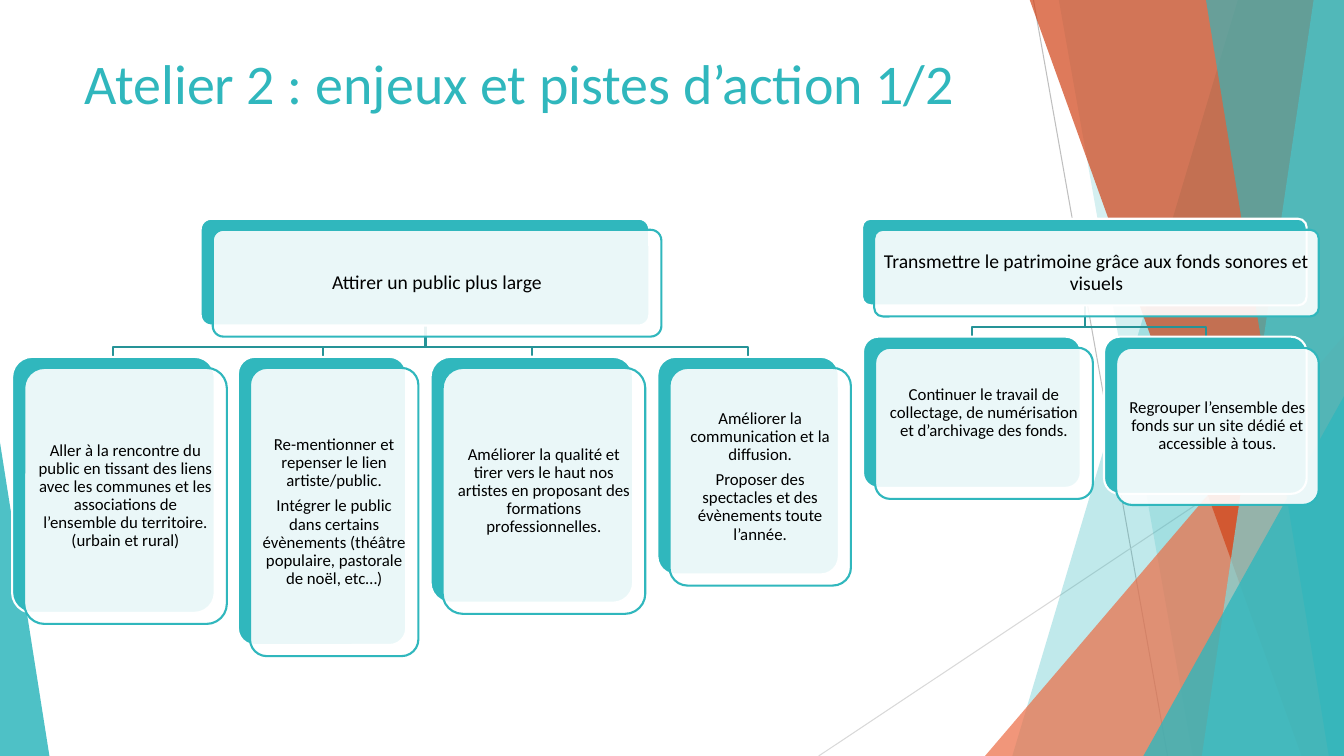
import pptx
import pptx.dml.color
import pptx.enum.shapes
import pptx.enum.text
import pptx.oxml
import pptx.oxml.ns
import pptx.util

RGBColor = pptx.dml.color.RGBColor
TEAL = RGBColor(0x30, 0xB7, 0xBD)
DARK_TEAL = RGBColor(0x26, 0x93, 0x97)
PALE_TEAL = RGBColor(0x7C, 0xDA, 0xDE)
ORANGE = RGBColor(0xEC, 0x6E, 0x47)
RUST = RGBColor(0xD1, 0x42, 0x16)
GREY = RGBColor(0xBF, 0xBF, 0xBF)
LIGHT_GREY = RGBColor(0xD9, 0xD9, 0xD9)
WHITE = RGBColor(0xFF, 0xFF, 0xFF)
BLACK = RGBColor(0, 0, 0)

PX = 9144  # EMU: 100 px to the inch
WIDTH, HEIGHT = 1333, 750
FONT = "Calibri"

TITLE = "Atelier 2 : enjeux et pistes d’action 1/2"
TITLE_BOX = (74, 0, 940, 120)

# Each branch: left, top, width, height and text of its head, then its actions
# as left, width, height, paragraphs and extra room under the text.
BRANCHES = [
    ((199, 217, 445, 106), "Attirer un public plus large", [
        (12, 201, 254, ["Aller à la rencontre du public en tissant des liens avec les communes "
                        "et les associations de l’ensemble du territoire. (urbain et rural)"], 0),
        (236, 167, 286, ["Re-mentionner et repenser le lien artiste/public.",
                         "Intégrer le public dans certains évènements (théâtre populaire, "
                         "pastorale de noël, etc…)"], 0),
        (427, 201, 244, ["Améliorer la qualité et tirer vers le haut nos artistes en proposant "
                         "des formations professionnelles."], 0),
        (652, 180, 216, ["Améliorer la communication et la diffusion.",
                         "Proposer des spectacles et des évènements toute l’année."], 0),
    ]),
    ((855, 217, 441, 86), "Transmettre le patrimoine grâce aux fonds sonores et visuels", [
        (856, 216, 150, ["Continuer le travail de collectage, de numérisation et d’archivage "
                         "des fonds."], 21),
        (1095, 201, 156, ["Regrouper l’ensemble des fonds sur un site dédié et accessible "
                          "à tous."], 0),
    ]),
]
LEVEL_GAP, BEND_ABOVE_ACTION = 31, 10
FRONT_SHIFT_X, FRONT_SHIFT_Y = 12, 11

THIN_LINES = [((1025, 0), (1158, 750), GREY), ((1333, 403), (812, 750), LIGHT_GREY)]
# Bands run from a slanted left edge (top x, bottom x) to the slide's right edge;
# triangles are left, top, width, height, apex.
FACETS = [
    ("band", (1228, 1004), TEAL, 30),
    ("band", (1050, 1183), TEAL, 20),
    ("triangle", (977, 333, 356, 417, 1), ORANGE, 72),
    ("band", (1021, 1291), RUST, 70),
    ("band", (1303, 1192), PALE_TEAL, 70),
    ("band", (1196, 1318), TEAL, 65),
    ("triangle", (1134, 393, 199, 357, 1), TEAL, 80),
    ("triangle", (0, 439, 49, 311, 0), TEAL, 85),
]


def emu(*lengths):
    return [length * PX for length in lengths]


def apply_format(target, values):
    for name, value in values.items():
        setattr(target, name, value)


def paint(shape, fill=None, opacity=100, line=None):
    """Set fill, its opacity in percent, and a 1.5 pt line; None means absent."""
    shape.shadow.inherit = False
    if fill is None:
        shape.fill.background()
    else:
        shape.fill.solid()
        shape.fill.fore_color.rgb = fill
        if opacity < 100:
            color = shape.fill._xPr.find(".//" + pptx.oxml.ns.qn("a:srgbClr"))
            alpha = pptx.oxml.parse_xml(
                f'<a:alpha {pptx.oxml.ns.nsdecls("a")} val="{opacity * 1000}"/>')
            color.append(alpha)
    if line is None:
        shape.line.fill.background()
    else:
        shape.line.color.rgb = line
        shape.line.width = pptx.util.Pt(1.5)


def add_outline(shapes, points, close):
    builder = shapes.build_freeform(*points[0], scale=PX)
    builder.add_line_segments(points[1:], close=close)
    return builder.convert_to_shape()


def add_thin_line(shapes, start, end, color):
    line = shapes.add_connector(pptx.enum.shapes.MSO_CONNECTOR.STRAIGHT, *emu(*start, *end))
    line.line.color.rgb = color
    line.line.width = pptx.util.Pt(0.75)
    line._element.spPr.append(
        pptx.oxml.parse_xml(f'<a:effectLst {pptx.oxml.ns.nsdecls("a")}/>'))


def add_facet(shapes, kind, geometry, color, opacity):
    if kind == "band":
        top_x, bottom_x = geometry
        corners = [(top_x, -1), (WIDTH, -1), (WIDTH, HEIGHT), (bottom_x, HEIGHT)]
        facet = add_outline(shapes, corners, close=True)
    else:
        *box, apex = geometry
        facet = shapes.add_shape(pptx.enum.shapes.MSO_SHAPE.ISOSCELES_TRIANGLE, *emu(*box))
        facet.adjustments[0] = apex
    paint(facet, color, opacity)


def write(shape, paragraphs, size, color, frame_format, paragraph_format):
    frame = shape.text_frame
    apply_format(frame, {"word_wrap": True, **frame_format})
    for index, text in enumerate(paragraphs):
        paragraph = frame.add_paragraph() if index else frame.paragraphs[0]
        apply_format(paragraph, paragraph_format)
        run = paragraph.add_run()
        run.text = text
        apply_format(run.font, {"name": FONT, "size": pptx.util.Pt(size)})
        run.font.color.rgb = color


def add_card(shapes, box, paragraphs, size, margin, room_below=0):
    """Add a teal card with a translucent white card, holding the text, over it."""
    left, top, width, height = box
    front_box = (left + FRONT_SHIFT_X, top + FRONT_SHIFT_Y, width, height)
    for place, fill, opacity, line in ((box, TEAL, 100, WHITE), (front_box, WHITE, 90, TEAL)):
        card = shapes.add_shape(pptx.enum.shapes.MSO_SHAPE.ROUNDED_RECTANGLE, *emu(*place))
        card.adjustments[0] = 0.1
        paint(card, fill, opacity, line)
    margins = {f"margin_{side}": margin * PX for side in ("left", "top", "right")}
    write(card, paragraphs, size, BLACK,
          {**margins, "margin_bottom": (margin + room_below) * PX,
           "vertical_anchor": pptx.enum.text.MSO_ANCHOR.MIDDLE},
          {"alignment": pptx.enum.text.PP_ALIGN.CENTER, "line_spacing": 0.9,
           "space_after": pptx.util.Pt(5)})


def add_branch(shapes, head_box, head_text, actions):
    left, top, width, height = head_box
    head_x, head_bottom = left + width / 2, top + height
    action_top = head_bottom + LEVEL_GAP
    bend_y = action_top - BEND_ABOVE_ACTION
    for action_left, action_width, *_ in actions:
        action_x = action_left + action_width / 2
        elbow = add_outline(shapes, [(head_x, head_bottom), (head_x, bend_y),
                                     (action_x, bend_y), (action_x, action_top)], close=False)
        paint(elbow, line=DARK_TEAL)
    add_card(shapes, head_box, [head_text], 14, 6)
    for action_left, action_width, action_height, paragraphs, room_below in actions:
        add_card(shapes, (action_left, action_top, action_width, action_height),
                 paragraphs, 12, 5, room_below)


def main():
    presentation = pptx.Presentation()
    apply_format(presentation, {"slide_width": WIDTH * PX, "slide_height": HEIGHT * PX})
    slide = presentation.slides.add_slide(presentation.slide_layouts[6])
    shapes = slide.shapes
    for thin_line in THIN_LINES:
        add_thin_line(shapes, *thin_line)
    for facet in FACETS:
        add_facet(shapes, *facet)
    write(shapes.add_textbox(*emu(*TITLE_BOX)), [TITLE], 40, TEAL,
          {"vertical_anchor": pptx.enum.text.MSO_ANCHOR.BOTTOM}, {})
    for branch in BRANCHES:
        add_branch(shapes, *branch)
    presentation.save("out.pptx")


if __name__ == "__main__":
    main()
